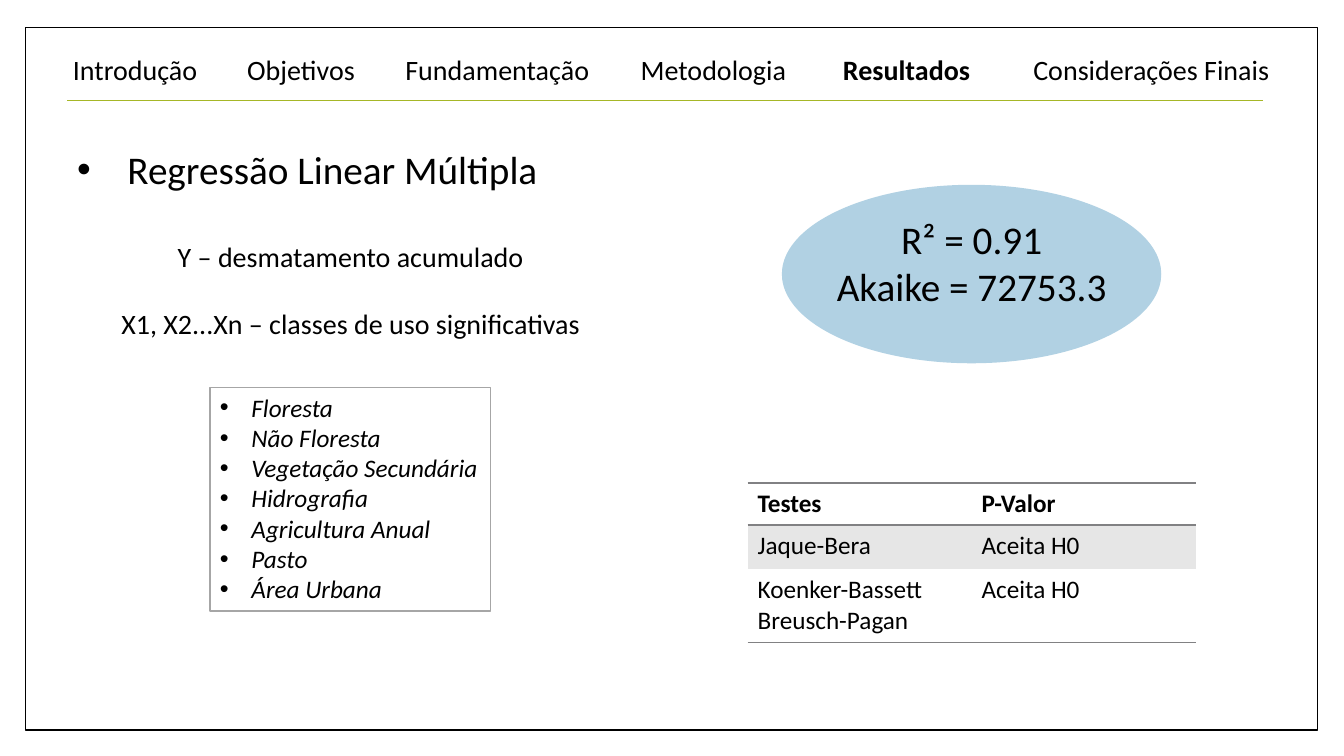
import pptx
import pptx.util
import pptx.dml.color
import pptx.enum.shapes
import pptx.enum.text
import pptx.oxml
import pptx.oxml.ns
import lxml.etree

Pt = pptx.util.Pt
SHAPE = pptx.enum.shapes.MSO_SHAPE
ALIGN = pptx.enum.text.PP_ALIGN
ANCHOR = pptx.enum.text.MSO_ANCHOR
BLACK, WHITE, GREY = "000000", "FFFFFF", "818183"
LIST = {"size": Pt(18), "italic": True}
HEAD = {"size": Pt(28)}
BODY = {"size": Pt(20)}


def ink(code):
    """Return the colour for a hex string."""
    return pptx.dml.color.RGBColor.from_string(code)


def apply(item, form):
    """Set each attribute named in a dict."""
    for name, value in form.items():
        setattr(item, name, value)


def node(parent, tag, **attrs):
    """Add a drawing element to a parent."""
    return lxml.etree.SubElement(parent, pptx.oxml.ns.qn(tag), attrs)


def write(par, text, form):
    """Add a black Calibri run to a paragraph."""
    run = par.add_run()
    run.text = text
    apply(run.font, {"name": "Calibri", **form})
    run.font.color.rgb = ink(BLACK)


def fill(frame, lines):
    """Write (text, font, paragraph) lines into a text frame."""
    frame.word_wrap = True
    for i, (text, form, layout) in enumerate(lines):
        par = frame.add_paragraph() if i else frame.paragraphs[0]
        apply(par, layout)
        write(par, text, form)


def bullet(par, indent):
    """Give a paragraph a hanging bullet."""
    props = par._p.get_or_add_pPr()
    props.set("marL", str(Pt(indent)))
    props.set("indent", str(-Pt(indent)))
    node(props, "a:buFont", typeface="Arial")
    node(props, "a:buChar", char="•")


def shape(slide, kind, box, back=None, edge=None, width=1):
    """Draw a flat preset shape in a box."""
    item = slide.shapes.add_shape(kind, *map(Pt, box))
    item.shadow.inherit = False
    if back:
        item.fill.solid()
        item.fill.fore_color.rgb = ink(back)
    else:
        item.fill.background()
    if edge:
        item.line.color.rgb = ink(edge)
        item.line.width = Pt(width)
    else:
        item.line.fill.background()
    return item


def menu(slide, box):
    """Place the section names on tab stops, with a rule below."""
    left, top, wide, high = box
    frame = slide.shapes.add_textbox(*map(Pt, box)).text_frame
    apply(frame, {"word_wrap": True, "vertical_anchor": ANCHOR.MIDDLE})
    par = frame.paragraphs[0]
    stops = node(par._p.get_or_add_pPr(), "a:tabLst")
    for stop in (124.5, 237.5, 405.5, 550, 686):
        node(stops, "a:tab", pos=str(Pt(stop)), algn="l")
    names = ("Introdução", "Objetivos", "Fundamentação", "Metodologia",
             "Resultados", "Considerações Finais")
    for i, name in enumerate(names):
        write(par, "\t" * (i > 0) + name, {**BODY, "bold": name == "Resultados"})
    ends = (left + 3, top + high, left + 857, top + high)
    rule = slide.shapes.add_connector(
        pptx.enum.shapes.MSO_CONNECTOR.STRAIGHT, *map(Pt, ends))
    rule.line.color.rgb = ink("A6B727")
    rule.line.width = Pt(0.79)
    node(rule._element.spPr, "a:effectLst")


def model(slide, box):
    """Place the heading, the variables and the list of classes."""
    left, top, wide, high = box
    frame = slide.shapes.add_textbox(*map(Pt, (left, top, wide, 148))).text_frame
    mid = {"alignment": ALIGN.CENTER}
    fill(frame, [
        ("Regressão Linear Múltipla", HEAD, {"alignment": ALIGN.JUSTIFY}),
        ("Y – desmatamento acumulado", BODY, {**mid, "space_before": Pt(34)}),
        ("X1, X2...Xn – classes de uso significativas", BODY,
         {**mid, "space_before": Pt(24)})])
    bullet(frame.paragraphs[0], 36)
    area = (left + 102, top + high - 160, 200.5, 160)
    uses = shape(slide, SHAPE.RECTANGLE, area, edge="A6A6A6", width=0.75).text_frame
    uses.vertical_anchor = ANCHOR.TOP
    names = ("Floresta", "Não Floresta", "Vegetação Secundária", "Hidrografia",
             "Agricultura Anual", "Pasto", "Área Urbana")
    fill(uses, [(name, LIST, {"alignment": ALIGN.LEFT}) for name in names])
    for par in uses.paragraphs:
        bullet(par, 22.5)


def score(slide, box):
    """Place the fit values over an ellipse."""
    left, top, wide, high = box
    shape(slide, SHAPE.OVAL, box, "B1D1E3")
    area = (left + 2, top + 18.5, wide - 4, 75)
    frame = slide.shapes.add_textbox(*map(Pt, area)).text_frame
    fill(frame, [(text, HEAD, {"alignment": ALIGN.CENTER})
                 for text in ("R² = 0.91", "Akaike = 72753.3")])


def border(cell, ruled):
    """Draw the named sides of a cell and clear the others."""
    props = cell._tc.get_or_add_tcPr()
    for i, side in enumerate("LRTB"):
        line = node(props, "a:ln" + side, w=str(Pt(1)))
        if side in ruled:
            node(node(line, "a:solidFill"), "a:srgbClr", val=GREY)
        else:
            node(line, "a:noFill")
        props.insert(i, line)


def tests(slide, box):
    """Place the table of tests."""
    rows = (("Testes", "P-Valor"), ("Jaque-Bera", "Aceita H0"),
            ("Koenker-Bassett\nBreusch-Pagan", "Aceita H0"))
    table = slide.shapes.add_table(3, 2, *map(Pt, box)).table
    apply(table, {"first_row": False, "horz_banding": False})
    for col in table.columns:
        col.width = Pt(box[2] / 2)
    looks = ((30, WHITE, "TB"), (31.7, "E6E6E6", "T"), (52, WHITE, "B"))
    for r, (high, back, ruled) in enumerate(looks):
        table.rows[r].height = Pt(high)
        for c, text in enumerate(rows[r]):
            cell = table.cell(r, c)
            cell.fill.solid()
            cell.fill.fore_color.rgb = ink(back)
            border(cell, ruled)
            form = {"size": Pt(18), "bold": r == 0}
            fill(cell.text_frame, [(line, form, {}) for line in text.split("\n")])


def main():
    """Build and save the slide."""
    deck = pptx.Presentation()
    apply(deck, {"slide_width": Pt(960), "slide_height": Pt(540)})
    slide = deck.slides.add_slide(deck.slide_layouts[6])
    shape(slide, SHAPE.RECTANGLE, (18, 19.5, 923, 502), WHITE, BLACK)
    menu(slide, (45, 27, 900, 45))
    model(slide, (48, 100, 405, 336.5))
    score(slide, (558.5, 132, 271, 127.5))
    tests(slide, (534, 345, 320, 113.7))
    deck.save("out.pptx")


if __name__ == "__main__":
    main()
